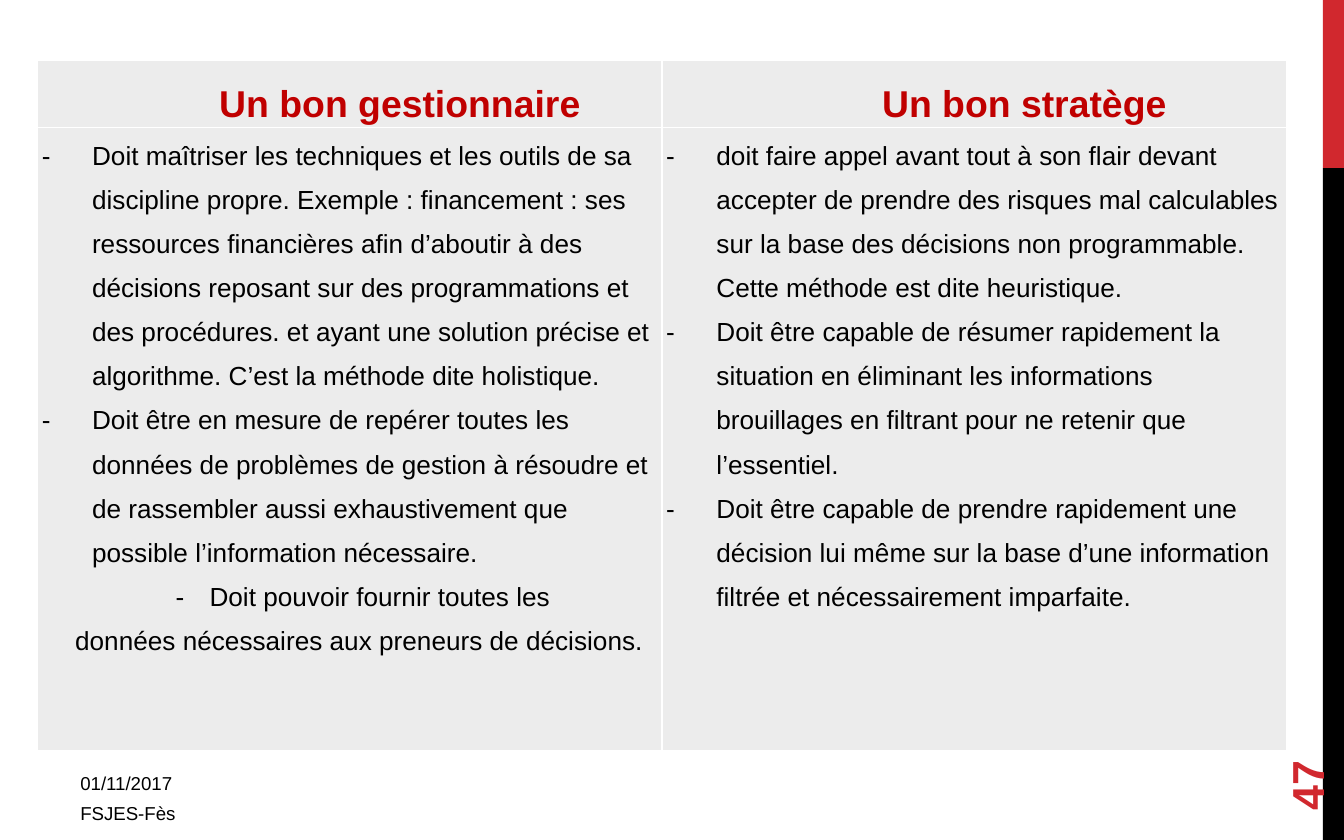
"""Build a slide comparing a good manager with a good strategist."""
import pptx
import pptx.dml.color
import pptx.enum.shapes
import pptx.enum.text
import pptx.oxml.ns
import pptx.util
from dataclasses import dataclass
from lxml import etree
from pptx.util import Cm

HEADINGS = ["Un bon gestionnaire", "Un bon stratège"]
BULLETS = [
    [
        "Doit maîtriser les techniques et les outils de sa discipline propre. Exemple : financement : ses "
        "ressources financières afin d’aboutir à des décisions reposant sur des programmations et des "
        "procédures. et ayant une solution précise et algorithme. C’est la méthode dite holistique.",
        "Doit être en mesure de repérer toutes les données de problèmes de gestion à résoudre et de "
        "rassembler aussi exhaustivement que possible l’information nécessaire.",
    ],
    [
        "doit faire appel avant tout à son flair devant accepter de prendre des risques mal calculables sur "
        "la base des décisions non programmable. Cette méthode est dite heuristique.",
        "Doit être capable de résumer rapidement la situation en éliminant les informations brouillages en "
        "filtrant pour ne retenir que l’essentiel.",
        "Doit être capable de prendre rapidement une décision lui même sur la base d’une information "
        "filtrée et nécessairement imparfaite.",
    ],
]
CLOSING = "-\tDoit pouvoir fournir toutes les données nécessaires aux preneurs de décisions."
DATE, SCHOOL, NUMBER = "01/11/2017", "FSJES-Fès", "47"


@dataclass(frozen=True)
class Theme:
    font: str = "Arial"
    red: str = "D1282E"
    heading: str = "C00000"
    black: str = "000000"
    cell: str = "ECECEC"
    border: str = "FFFFFF"
    heading_size: int = 20
    body_size: int = 14
    footer_size: int = 10
    number_size: int = 24


THEME = Theme()
ANCHOR = pptx.enum.text.MSO_ANCHOR


def paint(fill, color):
    fill.solid()
    fill.fore_color.rgb = pptx.dml.color.RGBColor.from_string(color)


def add_run(paragraph, text, size, color, bold=False):
    run = paragraph.add_run()
    run.text = text
    run.font.name = THEME.font
    run.font.size = pptx.util.Pt(size)
    run.font.bold = bold
    paint(run.font.fill, color)


def add_element(parent, tag, **attributes):
    element = etree.SubElement(parent, pptx.oxml.ns.qn(tag))
    for name, value in attributes.items():
        element.set(name, str(value))
    return element


def format_paragraph(paragraph, left, first, bullet=False, tab=None):
    paragraph.line_spacing = 1.5
    properties = paragraph._p.get_or_add_pPr()
    properties.set("marL", str(left))
    properties.set("indent", str(first))
    if bullet:
        add_element(properties, "a:buFont", typeface=THEME.font)
        add_element(properties, "a:buChar", char="-")
    else:
        add_element(properties, "a:buNone")
    if tab:
        add_element(add_element(properties, "a:tabLst"), "a:tab", pos=tab, algn="l")


def format_cell(cell, anchor):
    cell.margin_left = cell.margin_right = Cm(0.08)
    cell.margin_top = cell.margin_bottom = 0
    cell.vertical_anchor = anchor
    properties = cell._tc.get_or_add_tcPr()
    for side in ("a:lnL", "a:lnR", "a:lnT", "a:lnB"):
        line = add_element(properties, side, w=pptx.util.Pt(1))
        add_element(add_element(line, "a:solidFill"), "a:srgbClr", val=THEME.border)
    paint(cell.fill, THEME.cell)


def add_bar(slide, top, height, color):
    bar = slide.shapes.add_shape(
        pptx.enum.shapes.MSO_SHAPE.RECTANGLE, Cm(25), top, Cm(0.4), height)
    bar.shadow.inherit = False
    paint(bar.fill, color)
    bar.line.fill.background()


def add_label(slide, text, bounds, anchor, size, color, bold=False, rotation=0):
    box = slide.shapes.add_textbox(*map(Cm, bounds))
    box.rotation = rotation
    frame = box.text_frame
    frame.word_wrap = True
    frame.vertical_anchor = anchor
    add_run(frame.paragraphs[0], text, size, color, bold)
    return frame


def add_comparison(slide):
    heights = [Cm(1.26), Cm(11.79)]
    table = slide.shapes.add_table(
        2, len(HEADINGS), Cm(0.71), Cm(1.14), Cm(23.6), sum(heights)).table
    for row, height in zip(table.rows, heights):
        row.height = height
    for column, (heading, bullets) in enumerate(zip(HEADINGS, BULLETS)):
        head, body = table.cell(0, column), table.cell(1, column)
        format_cell(head, ANCHOR.MIDDLE)
        format_cell(body, ANCHOR.TOP)
        paragraph = head.text_frame.paragraphs[0]
        paragraph.alignment = pptx.enum.text.PP_ALIGN.CENTER
        format_paragraph(paragraph, 0, Cm(1.9))
        add_run(paragraph, heading, THEME.heading_size, THEME.heading, True)
        for index, text in enumerate(bullets):
            frame = body.text_frame
            paragraph = frame.add_paragraph() if index else frame.paragraphs[0]
            format_paragraph(paragraph, Cm(0.95), -Cm(0.95), bullet=True)
            add_run(paragraph, text, THEME.body_size, THEME.black)
    closing = table.cell(1, 0).text_frame.add_paragraph()
    format_paragraph(closing, Cm(0.63), Cm(1.9), tab=Cm(3.1))
    add_run(closing, CLOSING, THEME.body_size, THEME.black)


def main():
    presentation = pptx.Presentation()
    presentation.slide_width, presentation.slide_height = Cm(25.4), Cm(15.88)
    slide = presentation.slides.add_slide(presentation.slide_layouts[6])
    split = Cm(3.18)
    add_bar(slide, 0, split, THEME.red)
    add_bar(slide, split, presentation.slide_height - split, THEME.black)
    date = add_label(slide, DATE, (1.27, 14.3, 9.53, 0.71), ANCHOR.BOTTOM,
                     THEME.footer_size, THEME.black)
    date.margin_bottom = 0
    add_label(slide, SCHOOL, (1.27, 15.03, 9.53, 0.66), ANCHOR.TOP,
              THEME.footer_size, THEME.black)
    add_label(slide, NUMBER, (23.16, 13.54, 3.05, 1.02), ANCHOR.MIDDLE,
              THEME.number_size, THEME.red, True, 270)
    add_comparison(slide)
    presentation.save("out.pptx")


if __name__ == "__main__":
    main()
